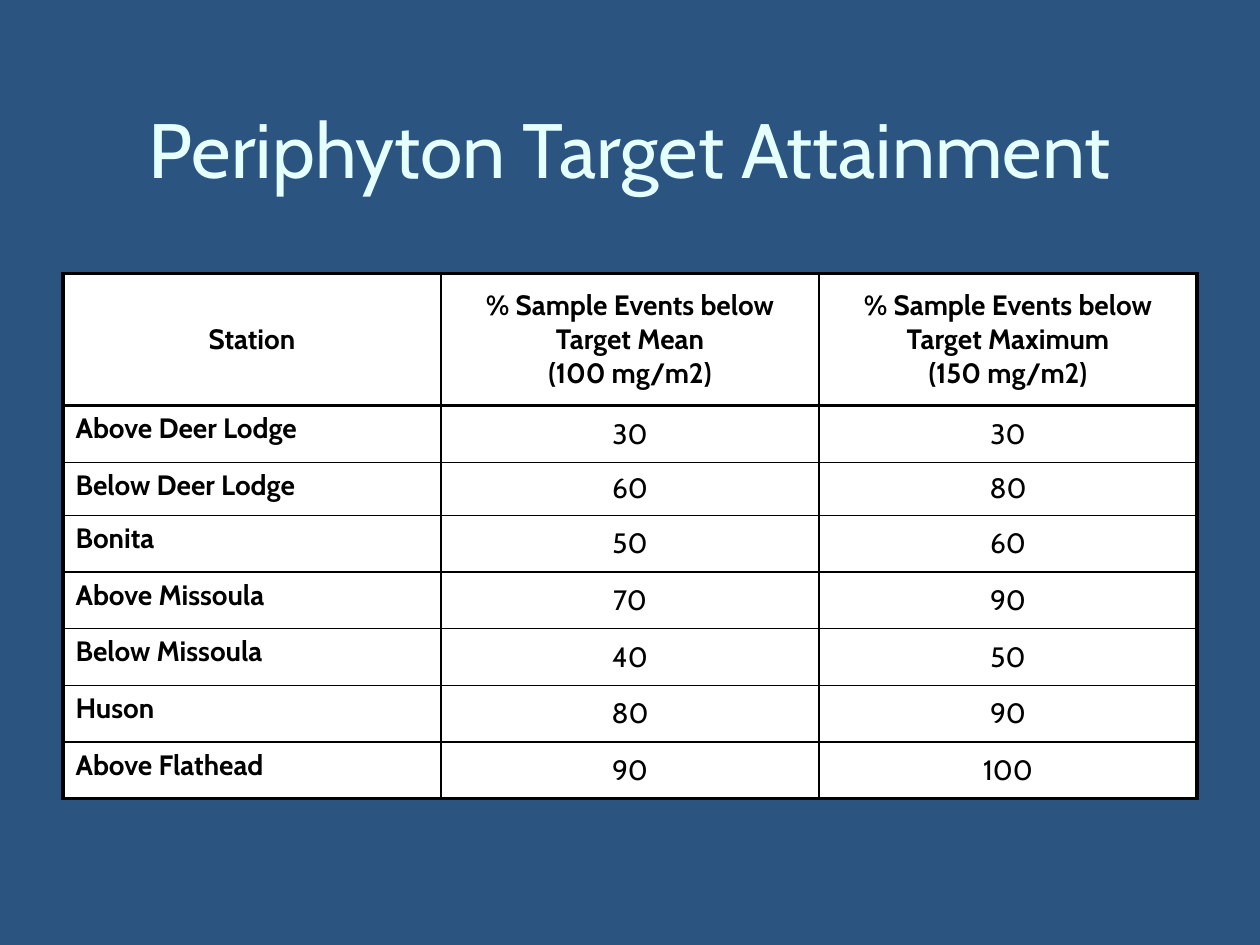
from dataclasses import dataclass

from lxml import etree
from pptx import Presentation
from pptx.dml.color import RGBColor
from pptx.enum.text import MSO_ANCHOR, PP_ALIGN
from pptx.oxml.ns import qn
from pptx.util import Inches, Pt

TOP, MIDDLE = MSO_ANCHOR.TOP, MSO_ANCHOR.MIDDLE
LEFT, CENTER = PP_ALIGN.LEFT, PP_ALIGN.CENTER
TITLE_ONLY = 5


@dataclass(frozen=True)
class Theme:
    """Colours, type sizes and line widths of the slide."""

    font: str = "Cabin"
    background: str = "2B5481"
    title: str = "E5FFFF"
    ink: str = "000000"
    cell: str = "FFFFFF"
    title_size: int = 44
    table_size: int = 16
    outer_line: int = 2
    inner_line: int = 1


class SlideBuilder:
    """Draws styled elements on the current slide."""

    def __init__(self, deck, theme):
        self.theme = theme
        self.slide = deck.slides.add_slide(deck.slide_layouts[TITLE_ONLY])
        fill = self.slide.background.fill
        fill.solid()
        fill.fore_color.rgb = RGBColor.from_string(theme.background)

    def style(self, paragraph, size, color, bold, alignment):
        paragraph.alignment = alignment
        font = paragraph.font
        font.name, font.size, font.bold = self.theme.font, Pt(size), bold
        font.color.rgb = RGBColor.from_string(color)

    def title(self, wording, left, top, width, height):
        heading = self.slide.shapes.title
        heading.left, heading.top = Inches(left), Inches(top)
        heading.width, heading.height = Inches(width), Inches(height)
        heading.text_frame.text = wording
        heading.text_frame.vertical_anchor = MIDDLE
        self.style(heading.text_frame.paragraphs[0], self.theme.title_size,
                   self.theme.title, False, CENTER)

    def borders(self, cell, widths):
        properties = cell._tc.get_or_add_tcPr()
        for side, width in widths.items():
            line = etree.SubElement(properties, qn(f"a:ln{side}"), w=str(Pt(width)))
            fill = etree.SubElement(line, qn("a:solidFill"))
            etree.SubElement(fill, qn("a:srgbClr"), val=self.theme.ink)

    def cell(self, cell, wording, bold, alignment, anchor, widths):
        self.borders(cell, widths)
        cell.fill.solid()
        cell.fill.fore_color.rgb = RGBColor.from_string(self.theme.cell)
        cell.vertical_anchor = anchor
        cell.text_frame.text = wording
        for paragraph in cell.text_frame.paragraphs:
            indents = paragraph._p.get_or_add_pPr()
            indents.set("marL", str(Inches(0.38)))
            indents.set("indent", str(Inches(-0.38)))
            self.style(paragraph, self.theme.table_size, self.theme.ink, bold, alignment)

    def table(self, records, left, top, width, row_heights):
        last_row, last_column = len(records) - 1, len(records[0]) - 1
        table = self.slide.shapes.add_table(
            len(records), len(records[0]), Inches(left), Inches(top),
            Inches(width), Inches(sum(row_heights))).table
        table.first_row = table.horz_banding = False
        outer, inner = self.theme.outer_line, self.theme.inner_line
        for r, (record, height) in enumerate(zip(records, row_heights)):
            table.rows[r].height = Inches(height)
            for c, value in enumerate(record):
                header, station = r == 0, c == 0
                widths = {
                    "L": outer if station else inner,
                    "R": outer if c == last_column else inner,
                    "T": outer if r <= 1 else inner,
                    "B": outer if r in (0, last_row) else inner,
                }
                station_name = station and not header
                self.cell(table.cell(r, c), str(value), header or station,
                          LEFT if station_name else CENTER,
                          TOP if station_name else MIDDLE, widths)


def main():
    deck = Presentation()
    deck.slide_width, deck.slide_height = Inches(10), Inches(7.5)
    attainment = [
        ("Station",
         "% Sample Events below\nTarget Mean\n(100 mg/m2)",
         "% Sample Events below\nTarget Maximum\n(150 mg/m2)"),
        ("Above Deer Lodge", 30, 30),
        ("Below Deer Lodge", 60, 80),
        ("Bonita", 50, 60),
        ("Above Missoula", 70, 90),
        ("Below Missoula", 40, 50),
        ("Huson", 80, 90),
        ("Above Flathead", 90, 100),
    ]
    builder = SlideBuilder(deck, Theme())
    builder.title("Periphyton Target Attainment", 0.5, 0.42, 9, 1.5)
    builder.table(attainment, 0.5, 2.17, 9, [1.05, 0.45, 0.42] + [0.45] * 5)
    deck.save("out.pptx")


if __name__ == "__main__":
    main()
